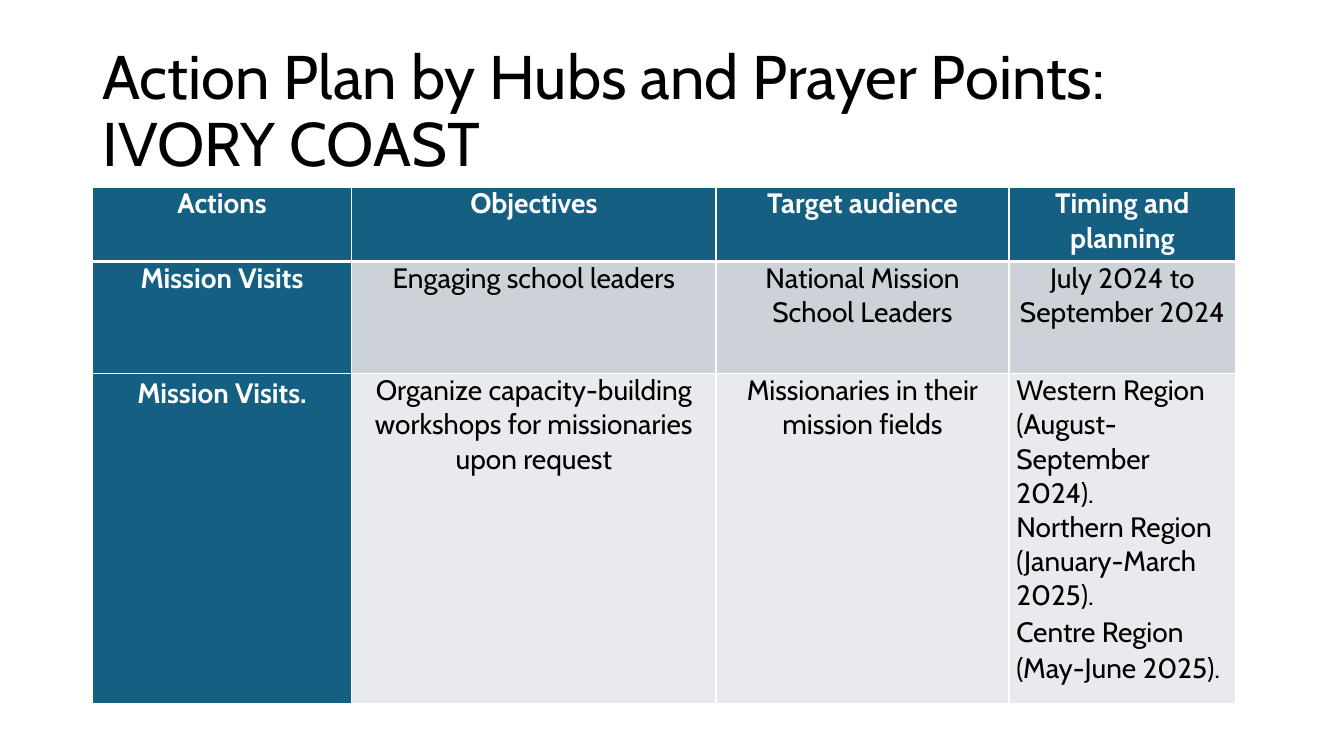
import pptx
import pptx.dml.color
import pptx.enum.text
import pptx.oxml
import pptx.oxml.ns
import pptx.util

RGBColor = pptx.dml.color.RGBColor
PP_ALIGN = pptx.enum.text.PP_ALIGN
MSO_ANCHOR = pptx.enum.text.MSO_ANCHOR

BLACK = RGBColor(0x00, 0x00, 0x00)
WHITE = RGBColor(0xFF, 0xFF, 0xFF)
BLUE = RGBColor(0x15, 0x60, 0x82)
BAND_DARK = RGBColor(0xCC, 0xD2, 0xD8)
BAND_LIGHT = RGBColor(0xE8, 0xEA, 0xED)

FONT = "Cabin"
PX = 9525
COL_WIDTHS = [247, 347, 279, 216]
ROW_HEIGHTS = [71, 107, 314]
BANDS = [BLUE, BAND_DARK, BAND_LIGHT]

ROWS = [
    [["Actions"], ["Objectives"], ["Target audience"], ["Timing and planning"]],
    [["Mission Visits"], ["Engaging school leaders"],
     ["National Mission School Leaders"], ["July 2024 to September 2024"]],
    [["Mission Visits."],
     ["Organize capacity-building workshops for missionaries upon request"],
     ["Missionaries in their mission fields"],
     ["Western Region (August-September 2024).",
      "Northern Region (January-March 2025).",
      "Centre Region (May-June 2025)."]],
]


def px(n):
    return pptx.util.Emu(n * PX)


def add_run(p, text, size, color, bold=False):
    r = p.add_run()
    r.text = text
    r.font.name = FONT
    r.font.size = pptx.util.Pt(size)
    r.font.bold = bold
    r.font.color.rgb = color


def set_borders(cell, widths):
    tcPr = cell._tc.get_or_add_tcPr()
    for i, (side, width) in enumerate(widths.items()):
        ln = pptx.oxml.parse_xml(
            f'<a:ln{side} {pptx.oxml.ns.nsdecls("a")} w="{pptx.util.Pt(width)}">'
            f'<a:solidFill><a:srgbClr val="{WHITE}"/></a:solidFill></a:ln{side}>')
        tcPr.insert(i, ln)


def add_title(s, text, x, y, w, h):
    sp = s.shapes.title
    sp.left, sp.top, sp.width, sp.height = px(x), px(y), px(w), px(h)
    tf = sp.text_frame
    tf.word_wrap = True
    tf.auto_size = pptx.enum.text.MSO_AUTO_SIZE.NONE
    tf.vertical_anchor = MSO_ANCHOR.MIDDLE
    p = tf.paragraphs[0]
    p.alignment = PP_ALIGN.LEFT
    p.line_spacing = 0.9
    add_run(p, text, 44, BLACK)


def fill_cell(cell, row, col, texts):
    heading = row == 0 or col == 0
    cell.fill.solid()
    cell.fill.fore_color.rgb = BLUE if heading else BANDS[row]
    cell.margin_left = cell.margin_right = px(7)
    cell.margin_top = cell.margin_bottom = 0
    cell.vertical_anchor = MSO_ANCHOR.TOP
    set_borders(cell, {"L": 1, "R": 1, "T": 3 if row == 1 else 1,
                       "B": 3 if row == 0 else 1})
    tf = cell.text_frame
    for i, text in enumerate(texts):
        p = tf.paragraphs[0] if i == 0 else tf.add_paragraph()
        p.alignment = PP_ALIGN.LEFT if len(texts) > 1 else PP_ALIGN.CENTER
        add_run(p, text, 20, WHITE if heading else BLACK, heading)
    if row == 2 and col in (0, 3):
        p.line_spacing = 1.07
        p.space_after = pptx.util.Pt(8)


def add_plan_table(s, x, y):
    table = s.shapes.add_table(
        len(ROW_HEIGHTS), len(COL_WIDTHS), px(x), px(y),
        px(sum(COL_WIDTHS)), px(sum(ROW_HEIGHTS))).table
    table.first_col = True
    for column, width in zip(table.columns, COL_WIDTHS):
        column.width = px(width)
    for row, height in zip(table.rows, ROW_HEIGHTS):
        row.height = px(height)
    for i, cells in enumerate(ROWS):
        for j, texts in enumerate(cells):
            fill_cell(table.cell(i, j), i, j, texts)


def main():
    prs = pptx.Presentation()
    prs.slide_width, prs.slide_height = px(1280), px(720)
    s = prs.slides.add_slide(prs.slide_layouts[5])
    add_title(s, "Action Plan by Hubs and Prayer Points: IVORY COAST",
              88, 38, 1104, 139)
    add_plan_table(s, 88, 178)
    prs.save("out.pptx")


if __name__ == "__main__":
    main()
